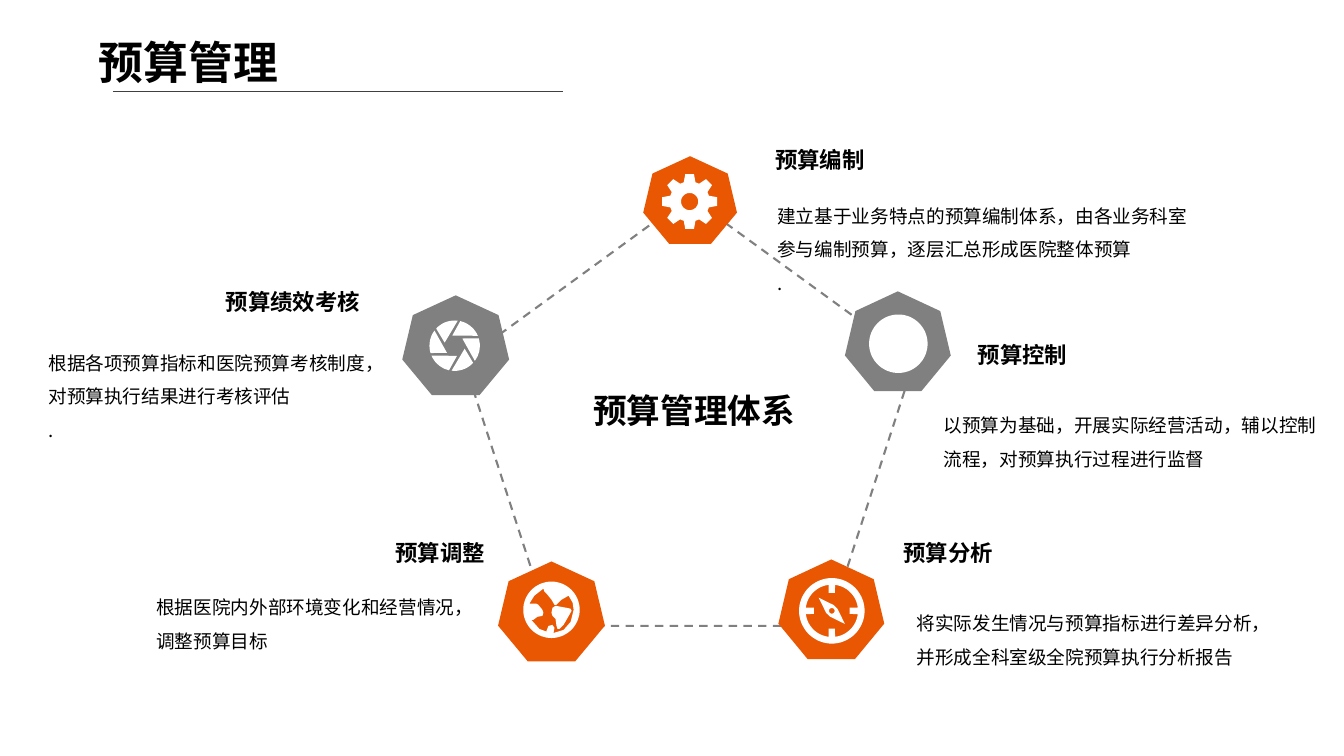
import math
from pptx import Presentation
from pptx import util as u
from pptx.dml.color import RGBColor
from pptx.enum import dml, shapes, text
from pptx.oxml import ns
from lxml import etree

FONT = "Noto Sans CJK SC"
ORANGE, GRAY, WHITE, BLACK = "EA5703", "808080", "FFFFFF", "000000"
CELL = u.Inches(1)


def paint(target, colour):
    target.solid()
    target.fore_color.rgb = RGBColor.from_string(colour)


def ring(points, turns=1):
    return [(radius * math.cos(math.radians(angle + 360 * turn / turns)),
             radius * math.sin(math.radians(angle + 360 * turn / turns)))
            for turn in range(turns) for radius, angle in points]


deck = Presentation()
deck.slide_width = int(13.33 * CELL)
deck.slide_height = int(7.5 * CELL)
page = deck.slides.add_slide(deck.slide_layouts[6])

pentagon = page.shapes.add_shape(
    shapes.MSO_SHAPE.REGULAR_PENTAGON,
    *[int(n * CELL) for n in (4.6, 1.95, 4.47, 4.26)])
pentagon.shadow.inherit = False
pentagon.fill.background()
paint(pentagon.line.fill, GRAY)
pentagon.line.width = u.Pt(1.5)
pentagon.line.dash_style = dml.MSO_LINE.DASH

gear = [
    ring([(20, -17), (27.5, -9), (27.5, 9), (20, 17)], 8),
    ring([(8.5, 0)], 36),
]
blade = [(25, angle) for angle in range(-137, -82, 6)] + [(10.4, -163)]
aperture = [ring([(r, a + 60 * k) for r, a in blade]) for k in range(6)]
dial = [(18, -10), (18, 10), (26, 7)] + [(26, a) for a in range(13, 84, 7)]
compass = [
    ring([(32.5, 0)], 72),
    ring(dial, 4),
    ring([(18.4, -135), (6, 160), (6, 108), (18.4, 45), (6, -20), (6, -72)]),
    ring([(2.8, 0)], 24),
]
ocean = [(2, 23), (3, 18), (1, 15), (-3, 16), (-5, 21), (-4, 22), (-12, 19),
         (-20, 10), (-18, 10), (-14, 7), (-9, 6), (-8, 3), (-9, 0), (-13, -5),
         (-15, -6), (-22, -6), (-17, -14), (-8, -21), (-7, -18), (-4, -15),
         (0, -10), (3, -5), (5, -5), (7, -7), (10, -10), (17, -14), (21, -7),
         (22, 0), (19, 12), (12, 20)]
continent = [(15, -2), (9, -3), (4, -4), (1, -2), (0, 3), (1, 6), (4, 9),
             (5, 16), (6, 19), (8, 19), (12, 15), (16, 8), (20, 1), (19, -1)]
globe = [ring([(28, 0)], 72), ocean, continent]
disc = [ring([(29, 0)], 72)]

badges = [
    (8.38, 2.89, 1.05, 0.99, GRAY, disc, 8.91, 3.41),
    (6.38, 1.55, 0.93, 0.87, ORANGE, gear, 6.84, 2),
    (3.99, 2.93, 1.06, 0.99, GRAY, aperture, 4.51, 3.43),
    (7.72, 5.55, 1.05, 0.99, ORANGE, compass, 8.25, 6.06),
    (4.94, 5.57, 1.06, 0.99, ORANGE, globe, 5.47, 6.05),
]
for left, top, width, height, colour, contours, centre_x, centre_y in badges:
    badge = page.shapes.add_shape(
        shapes.MSO_SHAPE.HEPTAGON,
        *[int(n * CELL) for n in (left, top, width, height)])
    outlines = [[(1000 * centre_x + 10 * x, 1000 * centre_y + 10 * y)
                 for x, y in contour] for contour in contours]
    builder = page.shapes.build_freeform(*outlines[0][0], scale=CELL / 1000)
    builder.add_line_segments(outlines[0][1:], close=True)
    for outline in outlines[1:]:
        builder.move_to(*outline[0])
        builder.add_line_segments(outline[1:], close=True)
    for shape, fill in ((badge, colour), (builder.convert_to_shape(), WHITE)):
        shape.shadow.inherit = False
        paint(shape.fill, fill)
        shape.line.fill.background()

LEFT, CENTER, RIGHT = (text.PP_ALIGN.LEFT, text.PP_ALIGN.CENTER,
                       text.PP_ALIGN.RIGHT)
headings = [
    (5.43, 3.78, 2.91, 0.58, "预算管理体系", CENTER, 24),
    (0.23, 2.78, 3.52, 0.43, "预算绩效考核 ", RIGHT, 16),
    (1.42, 5.26, 3.52, 0.44, "预算调整", RIGHT, 16),
    (9.57, 3.26, 3.76, 0.52, "预算控制", LEFT, 16),
    (8.83, 5.27, 3.79, 0.42, "预算分析", LEFT, 16),
    (7.56, 1.34, 3.81, 0.49, "预算编制", LEFT, 16),
    (0.85, 0.29, 12.44, 0.64, "预算管理", LEFT, 32),
]
bodies = [
    (0.35, 3.38, 3.52, 0.99,
     ["根据各项预算指标和医院预算考核制度，对预算执行结果进行考核评估", "."]),
    (1.42, 5.95, 3.52, 0.7, ["根据医院内外部环境变化和经营情况，调整预算目标"]),
    (9.23, 3.87, 3.99, 1.25,
     ["以预算为基础，开展实际经营活动，辅以控制流程，对预算执行过程进行监督"]),
    (8.96, 5.95, 3.79, 1.02,
     ["将实际发生情况与预算指标进行差异分析，并形成全科室级全院预算执行分析报告"]),
    (7.58, 1.92, 4.33, 1,
     ["建立基于业务特点的预算编制体系，由各业务科室参与编制预算，逐层汇总形成医院整体预算", "."]),
]
labels = [(*place, [words], align, size, True, 1, 0.07)
          for *place, words, align, size in headings]
labels += [(*place, lines, LEFT, 13.3, False, 1.5,
            0.07 if len(lines) > 1 else 0.4)
           for *place, lines in bodies]
for left, top, width, height, lines, align, size, bold, spacing, foot in labels:
    box = page.shapes.add_textbox(
        *[int(n * CELL) for n in (left, top, width, height)])
    frame = box.text_frame
    frame.word_wrap = True
    frame.vertical_anchor = text.MSO_ANCHOR.MIDDLE
    frame.margin_left = frame.margin_right = int(0.13 * CELL)
    frame.margin_top = int(0.07 * CELL)
    frame.margin_bottom = int(foot * CELL)
    for index, line in enumerate(lines):
        para = frame.add_paragraph() if index else frame.paragraphs[0]
        para.alignment = align
        para.line_spacing = spacing
        span = para.add_run()
        span.text = line
        span.font.name = FONT
        span.font.size = u.Pt(size)
        span.font.bold = bold
        paint(span.font.fill, BLACK)
        etree.SubElement(span.font._element, ns.qn("a:ea"), typeface=FONT)

rule = page.shapes.add_connector(
    shapes.MSO_CONNECTOR.STRAIGHT,
    *[int(n * CELL) for n in (1.12, 0.91, 5.58, 0.91)])
paint(rule.line.fill, "404040")
rule.line.width = u.Pt(1)
etree.SubElement(rule._element.spPr, ns.qn("a:effectLst"))

deck.save("out.pptx")
